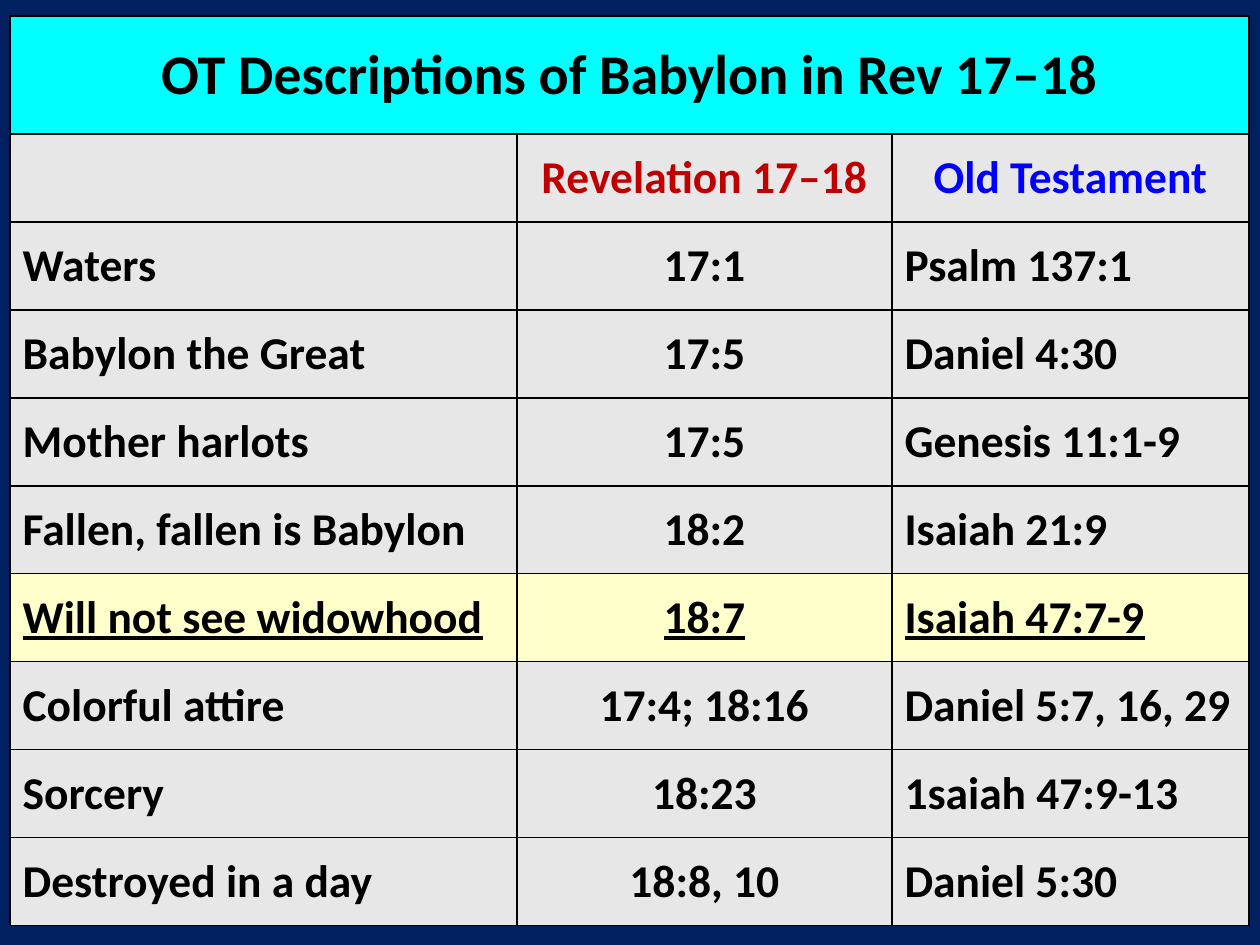
from lxml.etree import SubElement
from pptx import Presentation
from pptx.dml.color import RGBColor
from pptx.enum.text import MSO_ANCHOR as Anchor, PP_ALIGN as Align
from pptx.oxml.ns import qn
from pptx.util import Emu, Pt

PX_PER_INCH = 126
NAVY = RGBColor(0x00, 0x20, 0x60)
CYAN = RGBColor(0x00, 0xFF, 0xFF)
GREY = RGBColor(0xE7, 0xE7, 0xE7)
CREAM = RGBColor(0xFF, 0xFF, 0xCC)
BLACK = RGBColor(0x00, 0x00, 0x00)
RED = RGBColor(0xC0, 0x00, 0x00)
BLUE = RGBColor(0x00, 0x00, 0xFF)

TITLE = "OT Descriptions of Babylon in Rev 17–18"
HEADINGS = [("", BLACK), ("Revelation 17–18", RED), ("Old Testament", BLUE)]
PARALLELS = [
    ("Waters", "17:1", "Psalm 137:1"),
    ("Babylon the Great", "17:5", "Daniel 4:30"),
    ("Mother harlots", "17:5", "Genesis 11:1-9"),
    ("Fallen, fallen is Babylon", "18:2", "Isaiah 21:9"),
    ("Will not see widowhood", "18:7", "Isaiah 47:7-9"),
    ("Colorful attire", "17:4; 18:16", "Daniel 5:7, 16, 29"),
    ("Sorcery", "18:23", "1saiah 47:9-13"),
    ("Destroyed in a day", "18:8, 10", "Daniel 5:30"),
]
HIGHLIGHT = "Will not see widowhood"
COLUMN_ALIGNS = (Align.LEFT, Align.CENTER, Align.LEFT)
COLUMN_WIDTHS = (507, 375, 357)
TITLE_HEIGHT, ROW_HEIGHT = 118, 88


def px(length):
    return Emu(round(length * 914400 / PX_PER_INCH))


class SlideWriter:
    font = "Calibri"
    size = 26

    def __init__(self, page, background):
        self.page = page
        fill = page.background.fill
        fill.solid()
        fill.fore_color.rgb = background

    def table(self, left, top, widths, heights):
        frame = self.page.shapes.add_table(
            len(heights), len(widths), px(left), px(top),
            px(sum(widths)), px(sum(heights)))
        table = frame.table
        table.first_row = table.horz_banding = False
        for column, width in zip(table.columns, widths):
            column.width = px(width)
        for row, height in zip(table.rows, heights):
            row.height = px(height)
        return table

    def borders(self, cell):
        properties = cell._tc.get_or_add_tcPr()
        for side in "LRTB":
            line = SubElement(properties, qn(f"a:ln{side}"), w=str(Pt(1)))
            fill = SubElement(line, qn("a:solidFill"))
            SubElement(fill, qn("a:srgbClr"), val=str(BLACK))

    def cell(self, cell, text, fill, align, color=BLACK, size=None,
             underline=False):
        self.borders(cell)
        cell.fill.solid()
        cell.fill.fore_color.rgb = fill
        cell.vertical_anchor = Anchor.MIDDLE
        if not text:
            return
        para = cell.text_frame.paragraphs[0]
        para.alignment = align
        span = para.add_run()
        span.text = text
        font = span.font
        font.name = self.font
        font.size = Pt(size or self.size)
        font.bold = True
        font.underline = underline
        font.color.rgb = color


def main():
    deck = Presentation()
    deck.slide_width, deck.slide_height = px(1260), px(945)
    page = deck.slides.add_slide(deck.slide_layouts[6])
    writer = SlideWriter(page, NAVY)

    heights = [TITLE_HEIGHT] + [ROW_HEIGHT] * (1 + len(PARALLELS))
    table = writer.table(10, 16, COLUMN_WIDTHS, heights)

    # Title across all columns
    table.cell(0, 0).merge(table.cell(0, 2))
    for column, text in enumerate((TITLE, "", "")):
        writer.cell(table.cell(0, column), text, CYAN, Align.CENTER, size=32)

    # Column headings
    for column, (text, color) in enumerate(HEADINGS):
        writer.cell(table.cell(1, column), text, GREY, Align.CENTER, color)

    # Parallel passages, with one row highlighted
    for row, texts in enumerate(PARALLELS, start=2):
        marked = texts[0] == HIGHLIGHT
        for column, (text, align) in enumerate(zip(texts, COLUMN_ALIGNS)):
            writer.cell(table.cell(row, column), text,
                        CREAM if marked else GREY, align, underline=marked)

    deck.save("out.pptx")


if __name__ == "__main__":
    main()
